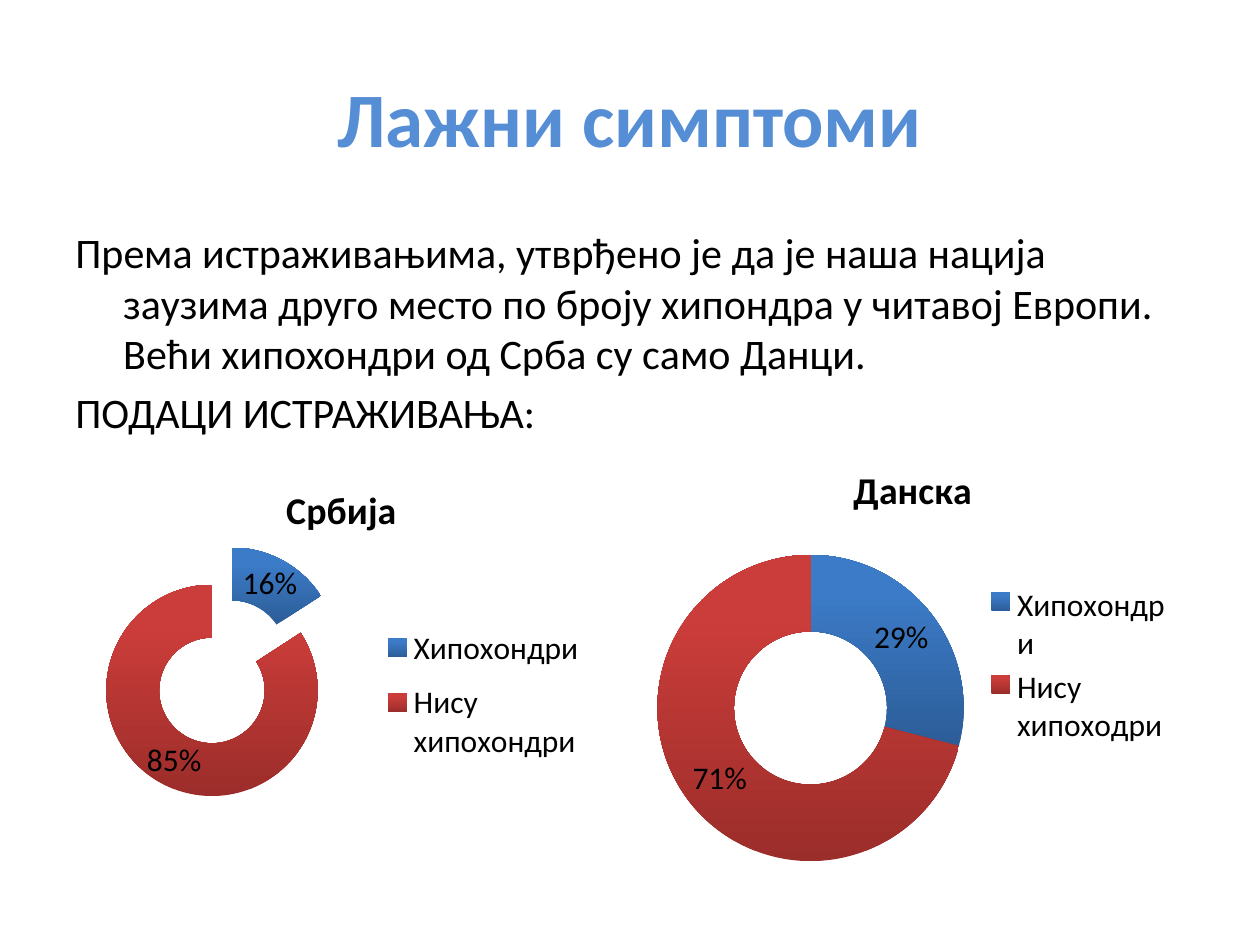
from dataclasses import dataclass

from lxml import etree
from pptx import Presentation
from pptx import util as u
from pptx.chart.data import CategoryChartData
from pptx.dml.color import RGBColor
from pptx.enum import chart as ch, text
from pptx.oxml.ns import qn


@dataclass(frozen=True)
class Theme:
    font: str = "Calibri"
    head: str = "558ED5"
    ink: str = "000000"
    tones: tuple = (("2C5D98", "3C7BC7"), ("9B2D2A", "CB3D3A"))
    big: float = 44
    mid: float = 24
    name: float = 21.6
    small: float = 18


THEME = Theme()


def style(font, size, color=THEME.ink, bold=False):
    font.name = THEME.font
    font.size = u.Pt(size)
    font.bold = bold
    font.color.rgb = RGBColor.from_string(color)


def add_text(slide, lines, box, size, color=THEME.ink, bold=False,
             align=text.PP_ALIGN.LEFT, anchor=text.MSO_ANCHOR.TOP,
             hang=0, gap=0):
    frame = slide.shapes.add_textbox(*map(u.Inches, box)).text_frame
    frame.word_wrap = True
    frame.vertical_anchor = anchor
    for i, line in enumerate(lines):
        para = frame.paragraphs[0] if i == 0 else frame.add_paragraph()
        para.alignment = align
        para.space_before = u.Pt(gap if i else 0)
        if hang:
            props = para._p.get_or_add_pPr()
            props.set("marL", str(u.Inches(hang)))
            props.set("indent", str(-u.Inches(hang)))
        run = para.add_run()
        run.text = line
        style(run.font, size, color, bold)


def place(part, area, index, inner=False):
    for old in part.findall(qn("c:layout")):
        part.remove(old)
    layout = etree.Element(qn("c:layout"))
    part.insert(index, layout)
    manual = etree.SubElement(layout, qn("c:manualLayout"))
    pairs = [("layoutTarget", "inner")] if inner else []
    pairs += [("xMode", "edge"), ("yMode", "edge"), *zip("xywh", area)]
    for tag, val in pairs:
        etree.SubElement(manual, qn(f"c:{tag}")).set("val", str(val))


def explode(series, amount):
    shift = etree.Element(qn("c:explosion"))
    shift.set("val", str(amount))
    series._element.find(qn("c:dPt")).addprevious(shift)


def add_ring(slide, title, cats, vals, box, area=None, key=None, burst=0):
    data = CategoryChartData()
    data.categories = cats
    data.add_series(title, vals)
    chart = slide.shapes.add_chart(
        ch.XL_CHART_TYPE.DOUGHNUT, *map(u.Inches, box), data).chart
    style(chart.font, THEME.small)
    chart.has_title = True
    chart.chart_title.include_in_layout = False
    run = chart.chart_title.text_frame.paragraphs[0].add_run()
    run.text = title
    style(run.font, THEME.name, bold=True)
    chart.has_legend = True
    chart.legend.position = ch.XL_LEGEND_POSITION.RIGHT
    chart.legend.include_in_layout = False
    style(chart.legend.font, THEME.small)

    plot = chart.plots[0]
    plot.vary_by_categories = True
    plot.has_data_labels = True
    labels = plot.data_labels
    labels.show_percentage = False
    labels.show_value = True
    labels.number_format = '0"%"'
    labels.number_format_is_linked = False
    style(labels.font, THEME.small)
    series = plot.series[0]
    for i, tones in enumerate(THEME.tones):
        fill = series.points[i].format.fill
        fill.gradient()
        fill.gradient_angle = 90
        for stop, tone, pos in zip(fill.gradient_stops, tones, (0, 0.8)):
            stop.color.rgb = RGBColor.from_string(tone)
            stop.position = pos
    if burst:
        explode(series, burst)
    if area:
        place(chart._chartSpace.chart.plotArea, area, 0, inner=True)
    if key:
        place(chart.legend._element, key, 1)


def main():
    deck = Presentation()
    deck.slide_width, deck.slide_height = u.Inches(10), u.Inches(7.5)
    slide = deck.slides.add_slide(deck.slide_layouts[6])
    add_text(slide, ["Лажни симптоми"], (0.5, 0.3, 9, 1.25), THEME.big,
             color=THEME.head, bold=True, align=text.PP_ALIGN.CENTER,
             anchor=text.MSO_ANCHOR.MIDDLE)
    add_text(slide, [
        "Према истраживањима, утврђено је да је наша нација заузима друго "
        "место по броју хипондра у читавој Европи. Већи хипохондри од Срба "
        "су само Данци.",
        "ПОДАЦИ ИСТРАЖИВАЊА:",
    ], (0.5, 1.75, 9, 4.95), THEME.mid, hang=0.38, gap=4.8)
    add_ring(slide, "Србија", ["Хипохондри", "Нису хипохондри"],
             (16, 85), (-0.25, 3.67, 5.92, 2.97),
             area=(0.17, 0.22, 0.34, 0.68), key=(0.55, 0.4, 0.28, 0.44),
             burst=40)
    add_ring(slide, "Данска", ["Хипохондри", "Нису хипоходри"],
             (29, 71), (5.08, 3.5, 4.33, 3.56))
    deck.save("out.pptx")


if __name__ == "__main__":
    main()
